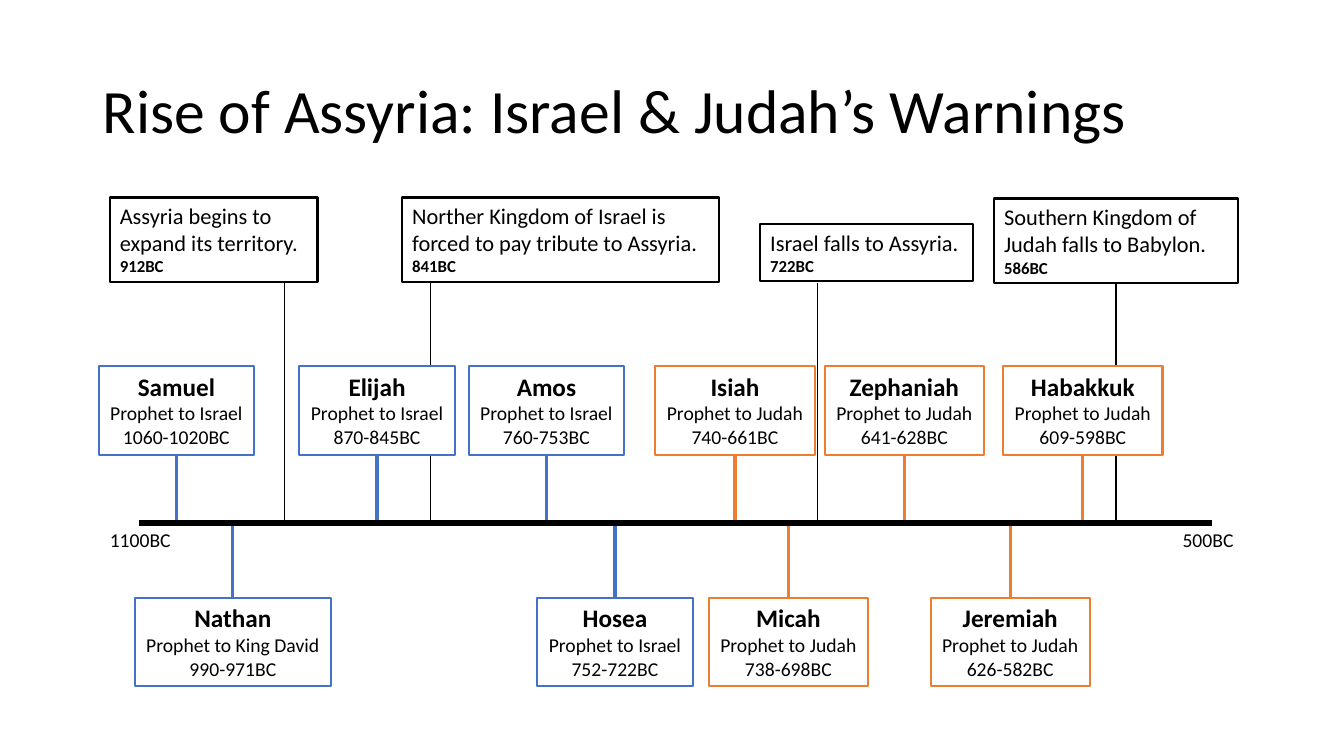
import pptx
import pptx.util
import pptx.dml.color
import pptx.enum.shapes
import pptx.enum.text
import pptx.oxml.ns
import lxml.etree

PX = 9144  # 100 px to the inch
FONT = "Calibri"
HEX = {"ink": "000000", "paper": "FFFFFF", "israel": "4472C4", "judah": "ED7D31"}

AXIS = 519
UPPER, LOWER = 363, 593
CARD = 88
FLOOR = 281  # bottom of the event boxes

# text, date, left, top, width, height, x of the marker
EVENTS = [
    ("Assyria begins to expand its territory.", "912BC", 109, 196, 206, 84, 282),
    ("Norther Kingdom of Israel is forced to pay tribute to Assyria.", "841BC",
     399, 196, 314, 84, 427),
    ("Israel falls to Assyria.", "722BC", 754, 222, 211, 57, 811),
    ("Southern Kingdom of Judah falls to Babylon.", "586BC", 986, 197, 242, 84, 1107),
]

# name, role, dates, middle, top, width, colour
PROPHETS = [
    ("Samuel", "Prophet to Israel", "1060-1020BC", 175, UPPER, 154, "israel"),
    ("Nathan", "Prophet to King David", "990-971BC", 231, LOWER, 194, "israel"),
    ("Elijah", "Prophet to Israel", "870-845BC", 374, UPPER, 154, "israel"),
    ("Amos", "Prophet to Israel", "760-753BC", 542, UPPER, 154, "israel"),
    ("Hosea", "Prophet to Israel", "752-722BC", 610, LOWER, 154, "israel"),
    ("Isiah", "Prophet to Judah", "740-661BC", 729, UPPER, 158, "judah"),
    ("Micah", "Prophet to Judah", "738-698BC", 782, LOWER, 158, "judah"),
    ("Zephaniah", "Prophet to Judah", "641-628BC", 897, UPPER, 158, "judah"),
    ("Jeremiah", "Prophet to Judah", "626-582BC", 1002, LOWER, 158, "judah"),
    ("Habakkuk", "Prophet to Judah", "609-598BC", 1074, UPPER, 158, "judah"),
]

ENDS = [("1100BC", 99, 81), ("500BC", 1163, 71)]


def color(name):
    return pptx.dml.color.RGBColor.from_string(HEX[name])


def scale(*nums):
    return [pptx.util.Emu(num * PX) for num in nums]


def style(target, values):
    for key, value in values.items():
        setattr(target, key, value)


def write(frame, lines, align="LEFT", wrap=True, anchor="TOP"):
    """Fill a frame with one paragraph per (text, size, bold)."""
    style(frame, {
        "word_wrap": wrap,
        "auto_size": pptx.enum.text.MSO_AUTO_SIZE.NONE,
        "vertical_anchor": getattr(pptx.enum.text.MSO_ANCHOR, anchor),
    })
    for num, (text, size, bold) in enumerate(lines):
        para = frame.add_paragraph() if num else frame.paragraphs[0]
        para.alignment = getattr(pptx.enum.text.PP_ALIGN, align)
        run = para.add_run()
        run.text = text
        style(run.font, {"name": FONT, "size": pptx.util.Pt(size), "bold": bold})
        run.font.color.rgb = color("ink")


def add_title(slide, text):
    title = slide.shapes.title
    place = zip(("left", "top", "width", "height"), scale(92, 40, 1150, 145))
    style(title, dict(place))
    write(title.text_frame, [(text, 44, False)], anchor="MIDDLE")
    title.text_frame.paragraphs[0].line_spacing = 0.9


def add_line(slide, start, end, tint, width):
    line = slide.shapes.add_connector(
        pptx.enum.shapes.MSO_CONNECTOR.STRAIGHT, *scale(*start, *end))
    line.line.color.rgb = color(tint)
    line.line.width = pptx.util.Pt(width)
    props = line._element.spPr
    lxml.etree.SubElement(props, pptx.oxml.ns.qn("a:effectLst"))
    return line


def add_box(slide, area, tint):
    box = slide.shapes.add_shape(
        pptx.enum.shapes.MSO_SHAPE.RECTANGLE, *scale(*area))
    box.shadow.inherit = False
    box.line.color.rgb = color(tint)
    box.line.width = pptx.util.Pt(1.5)
    return box


def add_event(slide, text, date, area):
    box = add_box(slide, area, "ink")
    box.fill.background()
    write(box.text_frame, [(text, 16, False), (date, 12, True)])


def add_card(slide, name, role, dates, mid, top, width, tint):
    """Draw a prophet's box and the stem that joins it to the axis."""
    box = add_box(slide, (mid - width // 2, top, width, CARD), tint)
    box.fill.solid()
    box.fill.fore_color.rgb = color("paper")
    lines = [(name, 18, True), (role, 14, False), (dates, 14, False)]
    write(box.text_frame, lines, "CENTER", wrap=False)
    above = top < AXIS
    edge = top + CARD if above else top
    stem = add_line(slide, (mid, edge), (mid, AXIS), tint, 2.25)
    stem.begin_connect(box, 2 if above else 0)


def add_label(slide, text, left, width):
    label = slide.shapes.add_textbox(*scale(left, AXIS, width, 34))
    write(label.text_frame, [(text, 14, False)], wrap=False)


def main():
    deck = pptx.Presentation()
    deck.slide_width, deck.slide_height = scale(1333, 750)
    slide = deck.slides.add_slide(deck.slide_layouts[5])
    add_title(slide, "Rise of Assyria: Israel & Judah’s Warnings")
    for *_, mark in EVENTS:
        add_line(slide, (mark, AXIS), (mark, FLOOR), "ink", 1)
    for end in ENDS:
        add_label(slide, *end)
    for prophet in PROPHETS:
        add_card(slide, *prophet)
    for text, date, *area, _ in EVENTS:
        add_event(slide, text, date, area)
    add_line(slide, (138, AXIS), (1202, AXIS), "ink", 4.5)
    deck.save("out.pptx")


if __name__ == "__main__":
    main()
